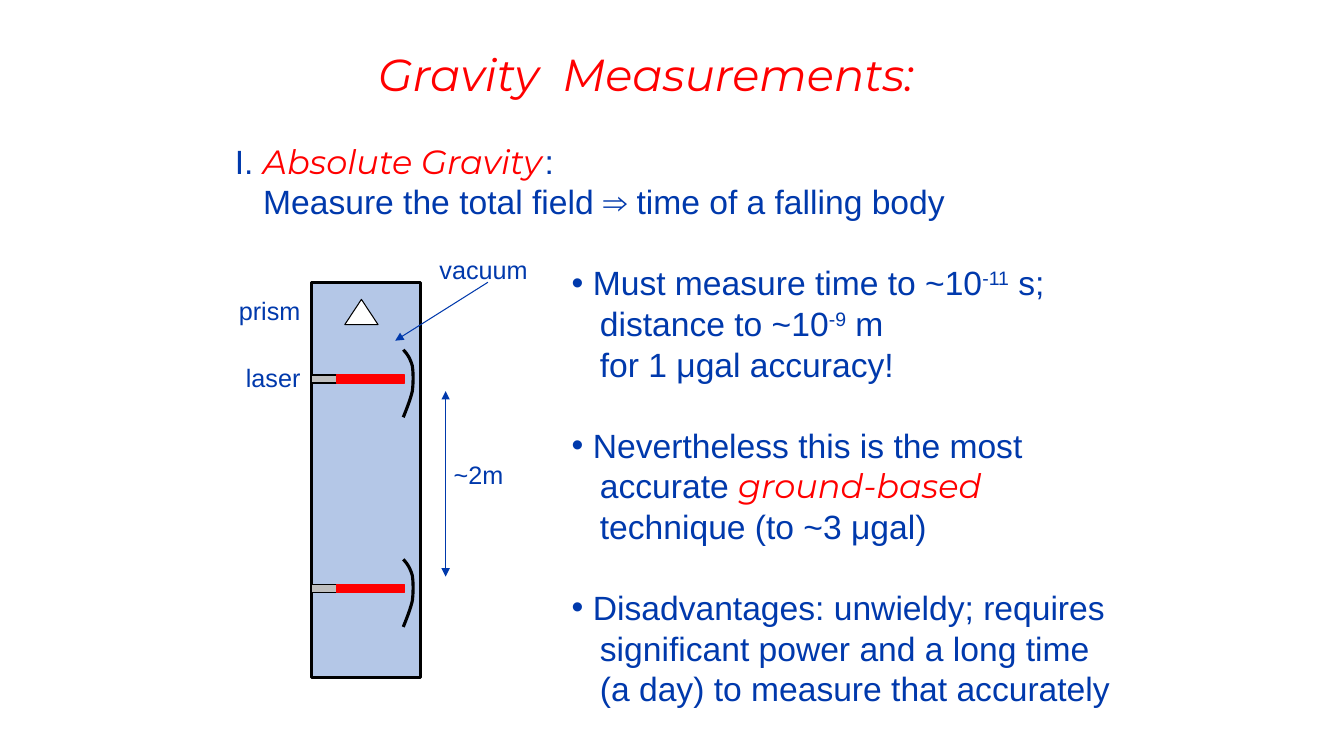
from lxml.etree import SubElement
from pptx import Presentation
from pptx.dml.color import RGBColor
from pptx.enum.shapes import MSO_CONNECTOR as CONN, MSO_SHAPE as SHAPE
from pptx.enum.text import MSO_ANCHOR, MSO_AUTO_SIZE, PP_ALIGN
from pptx.oxml.ns import qn
from pptx.util import Inches, Pt

BLUE = RGBColor(0x00, 0x39, 0xAC)
RED = RGBColor(0xFF, 0x00, 0x00)
TUBE = RGBColor(0xB4, 0xC7, 0xE7)
GREY = RGBColor(0xBF, 0xBF, 0xBF)
BLACK = RGBColor(0, 0, 0)
WHITE = RGBColor(0xFF, 0xFF, 0xFF)

TITLE = [("Gravity", "accent"), (" ", "wide"), ("Measurements:", "accent")]
HEADING = [
    ("plain", [("I. ", ""), ("Absolute Gravity", "accent"), (" ", "thin"), (":", "")]),
    ("indent", [("Measure the total field ⇒ time of a falling body", "")]),
]
POINTS = [
    ("bullet", [("Must measure time to ~10", ""), ("-11", "super"), (" s;", "")]),
    ("indent", [("distance to ~10", ""), ("-9", "super"), (" m", "")]),
    ("indent", [("for 1 μgal accuracy!", "")]),
    ("bullet", [("Nevertheless this is the most", "")]),
    ("indent", [("accurate ", ""), ("ground-based", "accent")]),
    ("indent", [("technique (to ~3 μgal)", "")]),
    ("bullet", [("Disadvantages: unwieldy; requires", "")]),
    ("indent", [("significant power and a long time", "")]),
    ("indent", [("(a day) to measure that accurately", "")]),
]
LABELS = [
    ("prism", 2.27, 2.88, 0.81),
    ("vacuum", 4.26, 2.47, 1.08),
    ("laser", 2.34, 3.55, 0.74),
    ("~2m", 4.4, 4.51, 0.69),
]
ARROWS = [
    ((4.84, 2.8), (3.92, 3.38), ["tailEnd"]),
    ((4.42, 3.88), (4.42, 5.72), ["headEnd", "tailEnd"]),
]
MARGINS = {"plain": (0, 0), "indent": (0.28, 0), "bullet": (0.21, -0.21)}
LASER_TOPS = [3.72, 5.8]
MIRROR = [
    [(0, 0), (0.04, 0.04), (0.07, 0.09), (0.09, 0.16)],
    [(0.09, 0.16), (0.1, 0.23), (0.1, 0.33), (0.09, 0.41)],
    [(0.09, 0.41), (0.07, 0.5), (0.02, 0.62), (0, 0.67)],
]
STEPS = 12


def add_runs(p, runs, size):
    for text, style in runs:
        r = p.add_run()
        r.text = text
        accent = style in ("accent", "wide", "thin")
        r.font.name = "Montserrat" if accent else "Arial"
        r.font.size = Pt(8 if style == "thin" else size)
        r.font.italic = accent
        r.font.color.rgb = RED if accent else BLUE
        if style == "super":
            r.font._element.set("baseline", "30000")
        if style == "wide":
            r.font._element.set("spc", "840")


def place(sp, left, top, width, height):
    sp.left, sp.top, sp.width, sp.height = map(Inches, (left, top, width, height))
    tf = sp.text_frame
    tf.word_wrap = False
    tf.auto_size = MSO_AUTO_SIZE.NONE
    tf.vertical_anchor = MSO_ANCHOR.TOP
    return tf


def fill_body(tf, lines):
    for i, (kind, runs) in enumerate(lines):
        p = tf.paragraphs[0] if i == 0 else tf.add_paragraph()
        pPr = p._p.get_or_add_pPr()
        left, hang = MARGINS[kind]
        pPr.set("marL", str(Inches(left)))
        pPr.set("indent", str(Inches(hang)))
        if kind == "bullet":
            SubElement(pPr, qn("a:buChar")).set("char", "•")
        else:
            SubElement(pPr, qn("a:buNone"))
        p.line_spacing = Pt(29)
        p.space_before = Pt(29 if kind == "bullet" and i else 0)
        add_runs(p, runs, 24)


def add_part(kind, box, fill, line, weight=0.75):
    sp = s.shapes.add_shape(kind, *map(Inches, box))
    sp.shadow.inherit = False
    sp.fill.solid()
    sp.fill.fore_color.rgb = fill
    sp.line.color.rgb = line
    sp.line.width = Pt(weight)


def bezier(curve, t):
    weights = ((1 - t) ** 3, 3 * t * (1 - t) ** 2, 3 * t * t * (1 - t), t ** 3)
    return tuple(sum(w * pt[axis] for w, pt in zip(weights, curve)) for axis in (0, 1))


def add_mirror(left, top):
    dots = [bezier(curve, k / STEPS) for curve in MIRROR for k in range(1, STEPS + 1)]
    fb = s.shapes.build_freeform(Inches(left), Inches(top))
    fb.add_line_segments([(Inches(left + x), Inches(top + y)) for x, y in dots], close=False)
    sp = fb.convert_to_shape()
    sp.shadow.inherit = False
    sp.fill.background()
    sp.line.color.rgb = BLACK
    sp.line.width = Pt(2.25)


prs = Presentation()
prs.slide_width, prs.slide_height = Inches(13.33), Inches(7.5)
s = prs.slides.add_slide(prs.slide_layouts[3])
title, heading, points = s.placeholders

title_p = place(title, 3.65, 0.41, 6.2, 0.64).paragraphs[0]
title_p.alignment = PP_ALIGN.LEFT
add_runs(title_p, TITLE, 32)
fill_body(place(heading, 2.23, 1.34, 7.49, 0.91), HEADING)
fill_body(place(points, 5.57, 2.55, 5.63, 4.54), POINTS)

add_part(SHAPE.RECTANGLE, (3.09, 2.8, 1.08, 3.92), TUBE, BLACK, 2.25)
add_part(SHAPE.ISOSCELES_TRIANGLE, (3.42, 2.97, 0.33, 0.25), WHITE, BLACK)
for top in LASER_TOPS:
    add_part(SHAPE.RECTANGLE, (3.09, top, 0.25, 0.08), GREY, BLACK)
    add_part(SHAPE.RECTANGLE, (3.34, top, 0.67, 0.08), RED, RED)
    add_mirror(4, top - 0.25)

for start, end, heads in ARROWS:
    arrow = s.shapes.add_connector(CONN.STRAIGHT, *map(Inches, start + end))
    arrow.line.color.rgb = BLUE
    arrow.line.width = Pt(0.75)
    ln = arrow.line._get_or_add_ln()
    for head in heads:
        SubElement(ln, qn("a:" + head)).set("type", "triangle")
    SubElement(arrow._element.spPr, qn("a:effectLst"))

for text, left, top, width in LABELS:
    tf = place(s.shapes.add_textbox(0, 0, 0, 0), left, top, width, 0.4)
    add_runs(tf.paragraphs[0], [(text, "")], 18)

prs.save("out.pptx")
